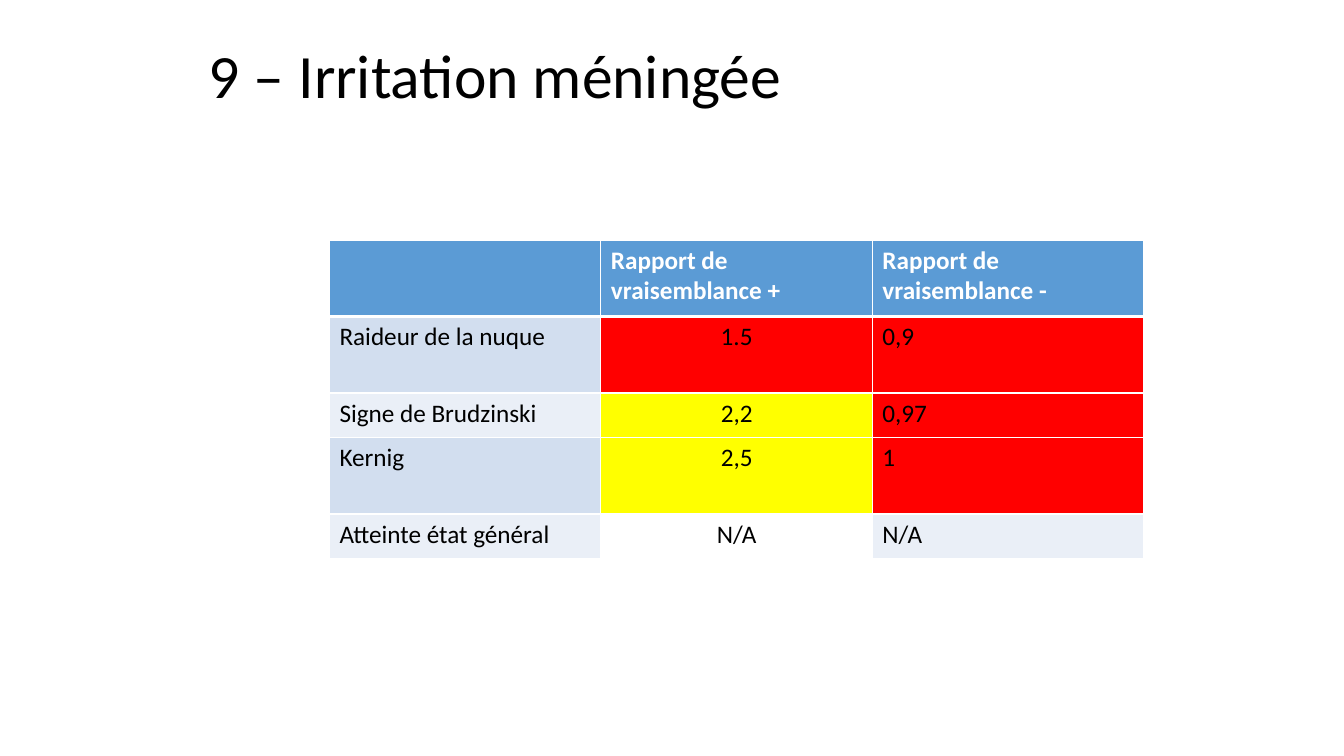
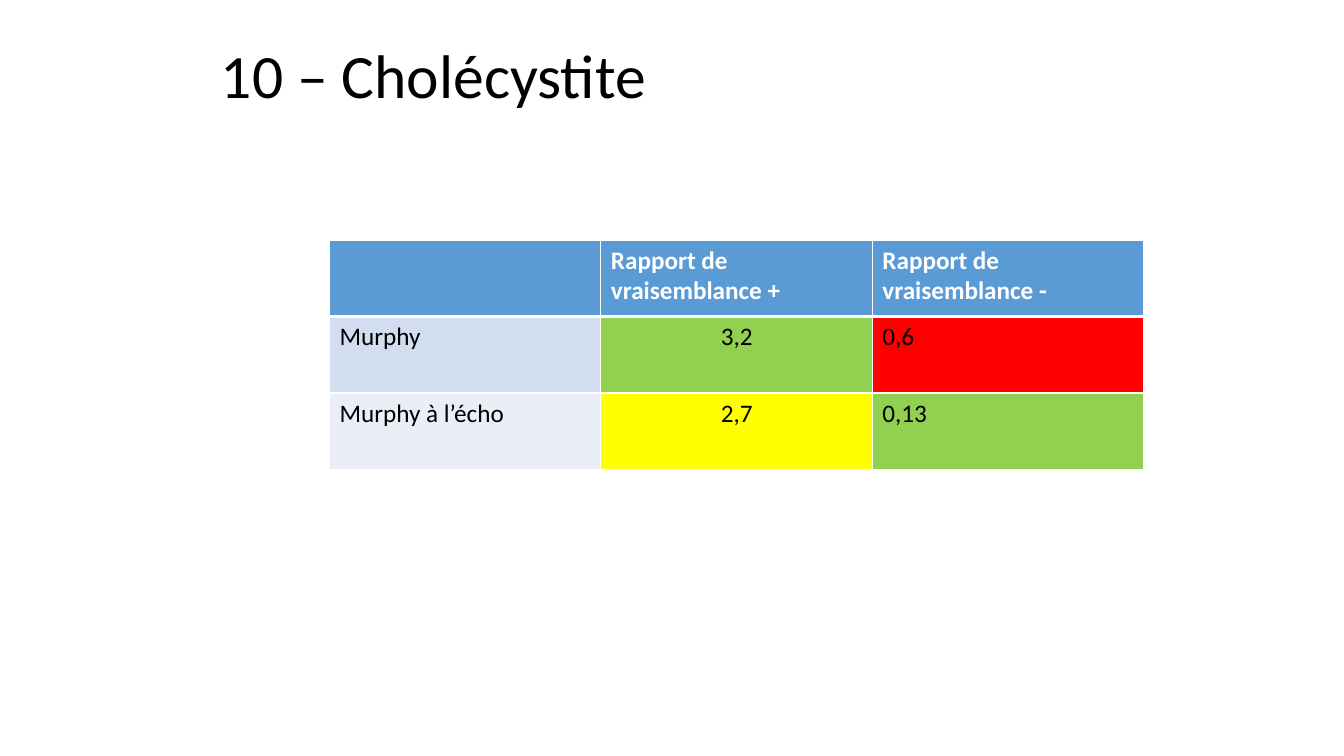
import dataclasses

import pptx
import pptx.dml.color
import pptx.enum.text
import pptx.oxml
import pptx.oxml.ns
import pptx.util

Pt = pptx.util.Pt
Align = pptx.enum.text.PP_ALIGN
Anchor = pptx.enum.text.MSO_ANCHOR


@dataclasses.dataclass(frozen=True)
class Theme:
    font: str = "Calibri"
    title: int = 44
    body: int = 18
    black: str = "000000"
    white: str = "FFFFFF"
    head: str = "5B9BD5"
    bands: tuple = ("D2DEEF", "EAEFF7")
    red: str = "FF0000"
    yellow: str = "FFFF00"
    green: str = "92D050"
    thin: int = 1
    thick: int = 3


THEME = Theme()
TALL, SHORT = 54.7, 31.7
HEADS = ("", "Rapport de vraisemblance +", "Rapport de vraisemblance -")
GRID = (235.3, 171.4, 581.8)  # left, top, width

# Each row: height, label, (value, fill) for + and for -
SIGNS = [
    {
        "title": "9 – Irritation méningée",
        "left": 142,
        "rows": [
            (TALL, "Raideur de la nuque", ("1.5", THEME.red), ("0,9", THEME.red)),
            (SHORT, "Signe de Brudzinski", ("2,2", THEME.yellow), ("0,97", THEME.red)),
            (TALL, "Kernig", ("2,5", THEME.yellow), ("1", THEME.red)),
            (SHORT, "Atteinte état général", ("N/A", THEME.white),
             ("N/A", THEME.bands[1])),
        ],
    },
    {
        "title": "10 – Cholécystite",
        "left": 150.6,
        "rows": [
            (TALL, "Murphy", ("3,2", THEME.green), ("0,6", THEME.red)),
            (TALL, "Murphy à l’écho", ("2,7", THEME.yellow), ("0,13", THEME.green)),
        ],
    },
]


def rgb(code):
    return pptx.dml.color.RGBColor.from_string(code)


def style(para, size, color, bold=False, align=Align.LEFT):
    para.alignment = align
    for run in para.runs:
        font = run.font
        font.name, font.size, font.bold = THEME.font, Pt(size), bold
        font.color.rgb = rgb(color)


def edge(cell, side, width):
    """Add one white border; call in the order L, R, T, B, before the fill."""
    space = pptx.oxml.ns.nsdecls("a")
    line = pptx.oxml.parse_xml(
        f'<a:ln{side} {space} w="{Pt(width)}"><a:solidFill>'
        f'<a:srgbClr val="{THEME.white}"/></a:solidFill></a:ln{side}>')
    cell._tc.get_or_add_tcPr().append(line)


def put_cell(cell, text, fill, row, col):
    top = THEME.thick if row == 1 else THEME.thin
    base = THEME.thick if row == 0 else THEME.thin
    for side, width in zip("LRTB", (THEME.thin, THEME.thin, top, base)):
        edge(cell, side, width)
    cell.fill.solid()
    cell.fill.fore_color.rgb = rgb(fill)
    cell.text_frame.text = text
    head = row == 0
    style(cell.text_frame.paragraphs[0], THEME.body,
          THEME.white if head else THEME.black, head,
          Align.CENTER if col == 1 and not head else Align.LEFT)


def put_title(slide, text, box):
    shape = slide.shapes.title
    shape.left, shape.top, shape.width, shape.height = map(Pt, box)
    frame = shape.text_frame
    frame.text = text
    frame.auto_size = pptx.enum.text.MSO_AUTO_SIZE.NONE
    frame.vertical_anchor = Anchor.TOP
    para = frame.paragraphs[0]
    para.line_spacing = 0.9
    style(para, THEME.title, THEME.black)


def put_table(slide, rows, box):
    left, top, width = box
    # Header row, then banded labels beside the rated values
    lines = [(TALL, [(text, THEME.head) for text in HEADS])]
    for num, (high, label, *rates) in enumerate(rows):
        lines.append((high, [(label, THEME.bands[num % 2]), *rates]))

    total = sum(high for high, cells in lines)
    table = slide.shapes.add_table(
        len(lines), len(HEADS), Pt(left), Pt(top), Pt(width), Pt(total)).table
    table.horz_banding = False
    for col in table.columns:
        col.width = Pt(width / len(HEADS))
    for row, (high, cells) in enumerate(lines):
        table.rows[row].height = Pt(high)
        for col, (text, fill) in enumerate(cells):
            put_cell(table.cell(row, col), text, fill, row, col)


def add_sign(deck, sign):
    slide = deck.slides.add_slide(deck.slide_layouts[5])
    left = sign["left"]
    put_title(slide, sign["title"], (left, 28.8, 894 - left, 104.4))
    put_table(slide, sign["rows"], GRID)


def main():
    deck = pptx.Presentation()
    deck.slide_width, deck.slide_height = Pt(960), Pt(540)
    for sign in SIGNS:
        add_sign(deck, sign)
    deck.save("out.pptx")


if __name__ == "__main__":
    main()
